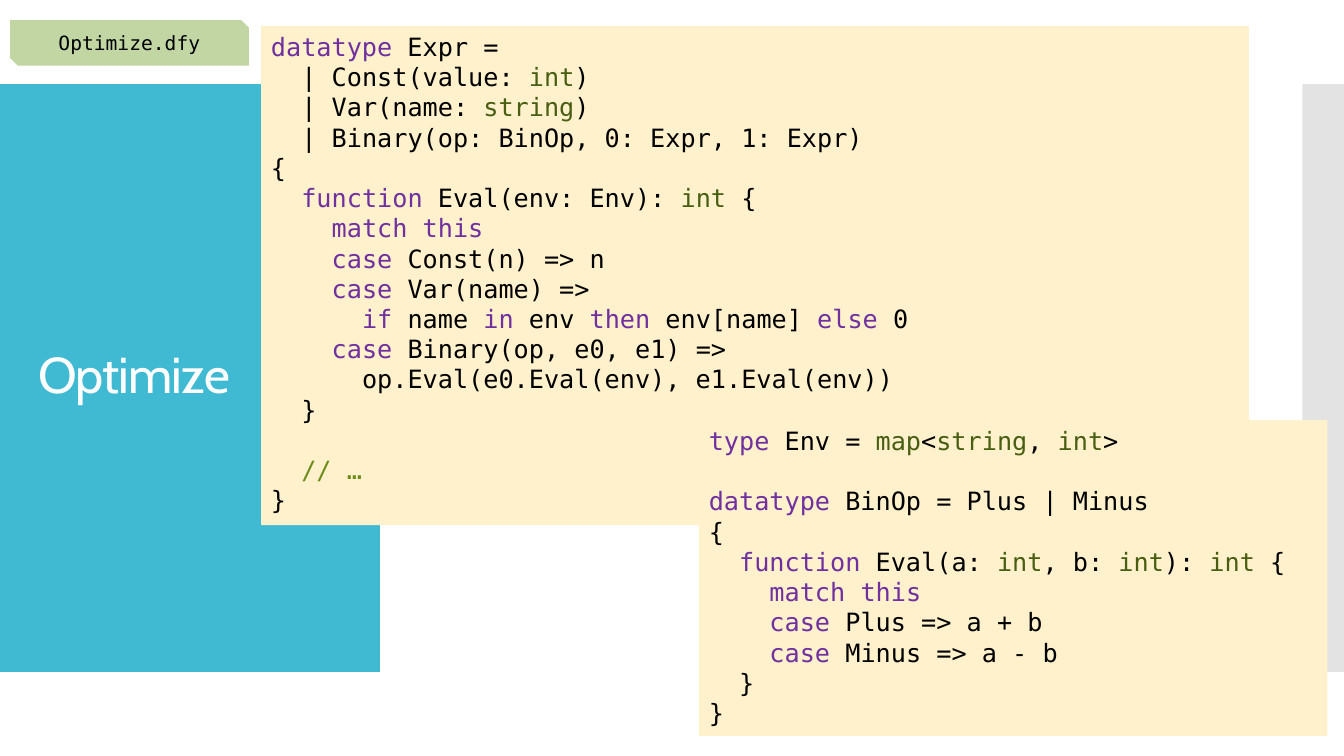
"""Build a slide that shows the Dafny source of a small expression optimizer."""
from dataclasses import dataclass
from itertools import groupby

from lxml import etree
from pptx import Presentation
from pptx import util as u
from pptx.dml.color import RGBColor
from pptx.enum import shapes, text
from pptx.oxml.ns import qn


@dataclass(frozen=True)
class Theme:
    """Colours, fonts and type sizes of the slide."""
    band: str = "40BAD2"
    edge: str = "C8C8C8"
    panel: str = "FFF1CB"
    tab: str = "C1D6A3"
    title: str = "FFFFFF"
    plain: str = "000000"
    keyword: str = "7030A0"
    type_name: str = "485E12"
    comment: str = "6C8C1A"
    title_font: str = "Cabin"
    code_font: str = "DejaVu Sans Mono"
    title_size: int = 36
    code_size: int = 18
    tab_size: int = 14
    indent: float = 10.84
    blank_line: float = 21.6


KEYWORDS = {"datatype", "function", "match", "this", "case", "if", "in", "then", "else", "type"}
TYPE_NAMES = {"int", "string", "map"}

EXPRESSION_CODE = """\
datatype Expr =
  | Const(value: int)
  | Var(name: string)
  | Binary(op: BinOp, 0: Expr, 1: Expr)
{
  function Eval(env: Env): int {
    match this
    case Const(n) => n
    case Var(name) =>
      if name in env then env[name] else 0
    case Binary(op, e0, e1) =>
      op.Eval(e0.Eval(env), e1.Eval(env))
  }

  // …
}"""

OPERATOR_CODE = """\
type Env = map<string, int>

datatype BinOp = Plus | Minus
{
  function Eval(a: int, b: int): int {
    match this
    case Plus => a + b
    case Minus => a - b
  }
}"""


class CodeSlide:
    """Hold the theme and the current slide, and draw each kind of element."""

    def __init__(self, slide, theme):
        """Keep the slide and its theme."""
        self.slide = slide
        self.theme = theme

    def block(self, box, color, preset=shapes.MSO_SHAPE.RECTANGLE, opacity=None):
        """Add a filled shape without outline; box is left, top, width, height."""
        shape = self.slide.shapes.add_shape(preset, *map(u.Pt, box))
        shape.shadow.inherit = False
        shape.line.fill.background()
        shape.fill.solid()
        shape.fill.fore_color.rgb = RGBColor.from_string(color)
        if opacity is not None:
            fill_color = shape.fill._xPr.find(".//" + qn("a:srgbClr"))
            etree.SubElement(fill_color, qn("a:alpha"), val=str(opacity * 1000))
        return shape

    def run(self, paragraph, words, font, size, color):
        """Add one formatted run."""
        run = paragraph.add_run()
        run.text = words
        run.font.name = font
        run.font.size = u.Pt(size)
        run.font.color.rgb = RGBColor.from_string(color)
        return run

    def title(self, words, box):
        """Fill the title placeholder and bring it to the front."""
        shape = self.slide.shapes.title
        self.slide.shapes._spTree.append(shape._element)
        shape.left, shape.top, shape.width, shape.height = map(u.Pt, box)
        frame = shape.text_frame
        frame.word_wrap = True
        frame.auto_size = text.MSO_AUTO_SIZE.NONE
        frame.vertical_anchor = text.MSO_ANCHOR.MIDDLE
        paragraph = frame.paragraphs[0]
        paragraph.alignment = text.PP_ALIGN.LEFT
        paragraph.line_spacing = 0.9
        theme = self.theme
        run = self.run(paragraph, words, theme.title_font, theme.title_size, theme.title)
        run.font._element.set("spc", "-60")

    def file_tab(self, words, box):
        """Add the label with the file name."""
        theme = self.theme
        shape = self.block(box, theme.tab, shapes.MSO_SHAPE.SNIP_2_DIAG_RECTANGLE)
        frame = shape.text_frame
        frame.vertical_anchor = text.MSO_ANCHOR.MIDDLE
        paragraph = frame.paragraphs[0]
        paragraph.alignment = text.PP_ALIGN.CENTER
        self.run(paragraph, words, theme.code_font, theme.tab_size, theme.plain)

    def token_color(self, token):
        """Choose the colour of one code token."""
        if token in KEYWORDS:
            return self.theme.keyword
        return self.theme.type_name if token in TYPE_NAMES else self.theme.plain

    def colored_parts(self, line):
        """Yield the text and colour of each run in a line of code."""
        if line.startswith("//"):
            yield line, self.theme.comment
            return
        tokens = ["".join(group) for _, group in groupby(line, str.isalnum)]
        for color, group in groupby(tokens, self.token_color):
            yield "".join(group), color

    def code(self, source, box):
        """Add a panel of highlighted code, with indents and gaps as paragraph formats."""
        theme = self.theme
        frame = self.block(box, theme.panel).text_frame
        frame.word_wrap = True
        frame.auto_size = text.MSO_AUTO_SIZE.SHAPE_TO_FIT_TEXT
        frame.vertical_anchor = text.MSO_ANCHOR.TOP
        paragraph, gap = frame.paragraphs[0], 0
        for number, line in enumerate(source.splitlines()):
            if not line:
                gap = theme.blank_line
                continue
            if number:
                paragraph = frame.add_paragraph()
            paragraph.alignment = text.PP_ALIGN.LEFT
            paragraph.space_before = u.Pt(gap)
            gap = 0
            words = line.lstrip()
            margin = u.Pt((len(line) - len(words)) * theme.indent)
            paragraph._p.get_or_add_pPr().set("marL", str(margin))
            for part, color in self.colored_parts(words):
                self.run(paragraph, part, theme.code_font, theme.code_size, color)


def main():
    """Build and save the presentation."""
    presentation = Presentation()
    presentation.slide_width, presentation.slide_height = u.Pt(960), u.Pt(540)
    theme = Theme()
    page = CodeSlide(presentation.slides.add_slide(presentation.slide_layouts[5]), theme)
    page.block((0, 60, 271.4, 420), theme.band)
    page.block((930.2, 60, 29.8, 420), theme.edge, opacity=50)
    page.title("Optimize", (20, 88.6, 232, 362))
    page.code(EXPRESSION_CODE, (186.5, 18.7, 705.6, 356.4))
    page.code(OPERATOR_CODE, (499.2, 300.2, 449, 225.4))
    page.file_tab("Optimize.dfy", (7.2, 14.4, 170.6, 32.4))
    presentation.save("out.pptx")


if __name__ == "__main__":
    main()
